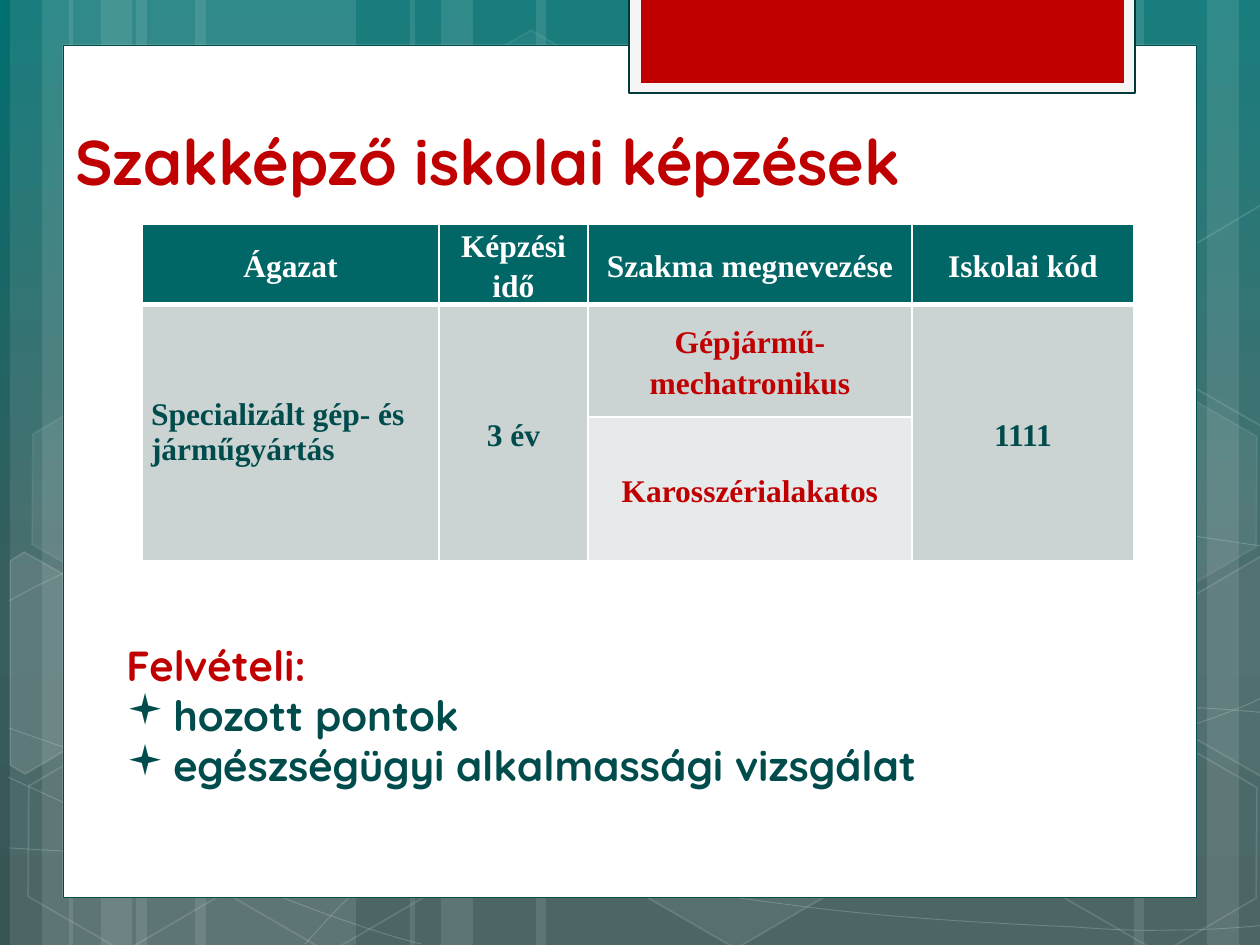
import copy
import math
from dataclasses import dataclass
from typing import Optional

import lxml.etree
import pptx
import pptx.dml.color
import pptx.enum.shapes
import pptx.enum.text
import pptx.oxml.ns
import pptx.util

EMU_PER_PX = 914400 / 126
COLORS = {
    "white": "FFFFFF", "red": "C00000", "dark_teal": "004C4C", "teal": "006666",
    "frame": "F5F5F5", "frame_edge": "003B3C", "band": "CCD3D3", "light_band": "E7EAEA",
    "sky_top": "006F6F", "sky_middle": "375D5D", "sky_bottom": "385555",
}
SKY = [("sky_top", 0), ("sky_middle", 0.62), ("sky_bottom", 1)]
TILT = 30
CENTER = pptx.enum.text.PP_ALIGN.CENTER
LEFT = pptx.enum.text.PP_ALIGN.LEFT
MIDDLE = pptx.enum.text.MSO_ANCHOR.MIDDLE
RECTANGLE = pptx.enum.shapes.MSO_SHAPE.RECTANGLE
HEXAGON = pptx.enum.shapes.MSO_SHAPE.HEXAGON
qn = pptx.oxml.ns.qn


@dataclass
class Look:
    fill: Optional[str] = None
    fill_alpha: int = 100
    line: Optional[str] = None
    line_pt: float = 1
    line_alpha: int = 100


@dataclass
class Hexagon:
    left: int
    top: int
    fill_alpha: int
    line_alpha: int


@dataclass
class CutHexagon:
    center: tuple
    corners: list
    fill_alpha: int


@dataclass
class Entry:
    row: int
    column: int
    text: str
    color: str
    fill: str
    align: pptx.enum.text.PP_ALIGN = CENTER
    row_span: int = 1


STRIPES = [(136, 220), (10, 63), (42, 105), (195, 220), (69, 63), (101, 105),
           (924, 220), (1207, 63), (1134, 105), (536, 388), (410, 63), (441, 105)]
CURVES = [
    [(9, 848), (77, 852), (145, 856), (239, 854), (334, 853), (451, 851), (577, 838),
     (703, 825), (882, 801), (998, 777), (1113, 753), (1231, 716), (1269, 694)],
    [(9, 601), (45, 581), (82, 562), (152, 543), (224, 521), (326, 496), (437, 488),
     (549, 479), (685, 478), (824, 488), (963, 498), (1193, 537), (1269, 547)],
    [(8, 777), (160, 847), (311, 916), (421, 944)],
    [(9, 728), (48, 742), (88, 756), (161, 776), (234, 795), (344, 827), (450, 848),
     (554, 869), (687, 892), (791, 905), (896, 919), (1008, 924), (1075, 927),
     (1140, 932), (1158, 930), (1191, 930), (1223, 929), (1246, 927), (1269, 925)],
    [(305, 944), (328, 919), (350, 893), (381, 871), (411, 848), (454, 823), (489, 805),
     (524, 788), (546, 780), (592, 767), (638, 754), (722, 737), (766, 728),
     (811, 719), (818, 719), (857, 717), (896, 713), (958, 709), (1000, 708),
     (1045, 707), (1116, 708), (1116, 708), (1144, 708), (1173, 708), (1201, 708),
     (1223, 709), (1245, 711), (1256, 712), (1268, 713), (1264, 712), (1268, 713)],
]
HEXAGONS = [Hexagon(421, 45, 4, 8), Hexagon(626, 742, 6, 12), Hexagon(14, 745, 0, 12),
            Hexagon(18, 393, 7, 8), Hexagon(219, 746, 0, 12), Hexagon(949, 571, 10, 12),
            Hexagon(1051, 747, 0, 12), Hexagon(1051, 396, 7, 8)]
CUT_HEXAGONS = [
    CutHexagon((45, 674), [(10, 561), (24, 552), (121, 607), (120, 718), (25, 774), (10, 765)], 10),
    CutHexagon((1241, 655), [(1167, 611), (1261, 556), (1271, 562), (1271, 772), (1263, 777), (1167, 722)], 4),
    CutHexagon((1241, 304), [(1167, 261), (1261, 205), (1273, 212), (1271, 422), (1263, 427), (1167, 372)], 0),
]
COLUMN_WIDTHS = [297, 149, 324, 222]
ROW_HEIGHTS = [79, 113, 144]
HEADINGS = ["Ágazat", "Képzési idő", "Szakma megnevezése", "Iskolai kód"]
ENTRIES = [Entry(0, column, heading, "white", "teal") for column, heading in enumerate(HEADINGS)] + [
    Entry(1, 0, "Specializált gép- és járműgyártás", "dark_teal", "band", LEFT, 2),
    Entry(1, 1, "3 év", "dark_teal", "band", row_span=2),
    Entry(1, 2, "Gépjármű-mechatronikus", "red", "band"),
    Entry(1, 3, "1111", "dark_teal", "band", row_span=2),
    Entry(2, 2, "Karosszérialakatos", "red", "light_band"),
]


def px(length: float) -> int:
    return round(length * EMU_PER_PX)


def rgb(name: str) -> pptx.dml.color.RGBColor:
    return pptx.dml.color.RGBColor.from_string(COLORS[name])


def paint(fill, color: str, alpha: int = 100) -> None:
    fill.solid()
    fill.fore_color.rgb = rgb(color)
    if alpha < 100:
        tint = fill._xPr.find(qn("a:solidFill"))[0]
        lxml.etree.SubElement(tint, qn("a:alpha"), val=str(alpha * 1000))


def dress(shape, look: Look) -> None:
    shape.shadow.inherit = False
    if look.fill and look.fill_alpha:
        paint(shape.fill, look.fill, look.fill_alpha)
    else:
        shape.fill.background()
    if look.line:
        shape.line.width = pptx.util.Pt(look.line_pt)
        paint(shape.line.fill, look.line, look.line_alpha)
    else:
        shape.line.fill.background()


def add_preset(slide, kind, box: tuple, look: Look):
    shape = slide.shapes.add_shape(kind, *map(px, box))
    dress(shape, look)
    return shape


def add_outline(slide, points: list, look: Look, close: bool):
    corners = [(px(x), px(y)) for x, y in points]
    builder = slide.shapes.build_freeform(*corners[0])
    builder.add_line_segments(corners[1:], close=close)
    outline = builder.convert_to_shape()
    dress(outline, look)
    return outline


def add_curve(slide, knots: list, look: Look) -> None:
    curve = add_outline(slide, knots, look, False)
    segments = list(curve._element.iter(qn("a:lnTo")))
    for first in range(0, len(segments), 3):
        bend = lxml.etree.SubElement(segments[first].getparent(), qn("a:cubicBezTo"))
        for segment in segments[first:first + 3]:
            bend.append(segment[0])
            segment.getparent().remove(segment)


def add_cut_hexagon(slide, item: CutHexagon) -> None:
    cosine, sine = math.cos(math.radians(TILT)), math.sin(math.radians(TILT))
    center_x, center_y = item.center
    upright = [(center_x + (x - center_x) * cosine + (y - center_y) * sine,
                center_y - (x - center_x) * sine + (y - center_y) * cosine) for x, y in item.corners]
    outline = add_outline(slide, upright, Look("white", item.fill_alpha, "white", 1, 12), True)
    outline.rotation = TILT


def add_run(paragraph, text: str, size: int, font: str, color: str) -> None:
    run = paragraph.add_run()
    run.text = text
    run.font.size = pptx.util.Pt(size)
    run.font.name = font
    run.font.bold = True
    run.font.color.rgb = rgb(color)


def add_text_frame(slide, box: tuple):
    frame = slide.shapes.add_textbox(*map(px, box)).text_frame
    frame.word_wrap = True
    return frame


def draw_backdrop(slide) -> None:
    sky = slide.background.fill
    sky.gradient()
    sky.gradient_angle = 270
    stops = slide.element.find(".//" + qn("a:gsLst"))
    stops.append(copy.deepcopy(stops[0]))
    for stop, (color, position) in zip(sky.gradient_stops, SKY):
        stop.color.rgb = rgb(color)
        stop.position = position
    for left, width in STRIPES:
        add_preset(slide, RECTANGLE, (left, 0, width, 945), Look("white", 10))
    for knots in CURVES:
        add_curve(slide, knots, Look(line="white", line_pt=0.5, line_alpha=20))
    for item in HEXAGONS:
        look = Look("white", item.fill_alpha, "white", 1, item.line_alpha)
        hexagon = add_preset(slide, HEXAGON, (item.left, item.top, 220, 192), look)
        hexagon.adjustments[0] = 0.285
        hexagon.rotation = TILT
    for item in CUT_HEXAGONS:
        add_cut_hexagon(slide, item)
    add_preset(slide, RECTANGLE, (63, 45, 1134, 853), Look("white", line="dark_teal", line_pt=0.5))
    add_preset(slide, RECTANGLE, (629, -3, 506, 96), Look("frame", line="frame_edge", line_pt=1.25))
    add_preset(slide, RECTANGLE, (641, -3, 483, 86), Look("red"))


def add_borders(cell, row: int) -> None:
    widths = {"L": 1, "R": 1, "T": 3 if row == 1 else 1, "B": 3 if row == 0 else 1}
    for side, width in widths.items():
        border = lxml.etree.SubElement(cell._tc.get_or_add_tcPr(), qn("a:ln" + side), w=str(width * 12700))
        solid = lxml.etree.SubElement(border, qn("a:solidFill"))
        lxml.etree.SubElement(solid, qn("a:srgbClr"), val=COLORS["white"])


def draw_trainings(slide) -> None:
    box = (142, 224, sum(COLUMN_WIDTHS), sum(ROW_HEIGHTS))
    trainings = slide.shapes.add_table(len(ROW_HEIGHTS), len(COLUMN_WIDTHS), *map(px, box)).table
    for column, width in zip(trainings.columns, COLUMN_WIDTHS):
        column.width = px(width)
    for row, height in zip(trainings.rows, ROW_HEIGHTS):
        row.height = px(height)
    for entry in ENTRIES:
        cell = trainings.cell(entry.row, entry.column)
        if entry.row_span > 1:
            cell.merge(trainings.cell(entry.row + entry.row_span - 1, entry.column))
        cell.margin_left = cell.margin_right = px(9)
        cell.margin_top = cell.margin_bottom = 0
        cell.vertical_anchor = MIDDLE
        add_borders(cell, entry.row)
        paint(cell.fill, entry.fill)
        paragraph = cell.text_frame.paragraphs[0]
        paragraph.alignment = entry.align
        paragraph.line_spacing = 1.15 if entry.align == CENTER else 1.0
        add_run(paragraph, entry.text, 18, "Times New Roman", entry.color)


def draw_texts(slide) -> None:
    title = add_text_frame(slide, (63, 38, 1134, 166))
    title.vertical_anchor = pptx.enum.text.MSO_ANCHOR.BOTTOM
    add_run(title.paragraphs[0], "Szakképző iskolai képzések", 36, "Quicksand", "red")
    admission = add_text_frame(slide, (114, 633, 1048, 165))
    add_run(admission.paragraphs[0], "Felvételi:", 24, "Quicksand", "red")
    for criterion in ("hozott pontok", "egészségügyi alkalmassági vizsgálat"):
        paragraph = admission.add_paragraph()
        properties = paragraph._p.get_or_add_pPr()
        properties.set("marL", str(px(47)))
        properties.set("indent", str(px(-47)))
        lxml.etree.SubElement(properties, qn("a:buFont"), typeface="Wingdings")
        lxml.etree.SubElement(properties, qn("a:buChar"), char="▪")
        add_run(paragraph, criterion, 24, "Quicksand", "dark_teal")


def main() -> None:
    deck = pptx.Presentation()
    deck.slide_width, deck.slide_height = px(1260), px(945)
    slide = deck.slides.add_slide(deck.slide_layouts[6])
    draw_backdrop(slide)
    draw_trainings(slide)
    draw_texts(slide)
    deck.save("out.pptx")


if __name__ == "__main__":
    main()
